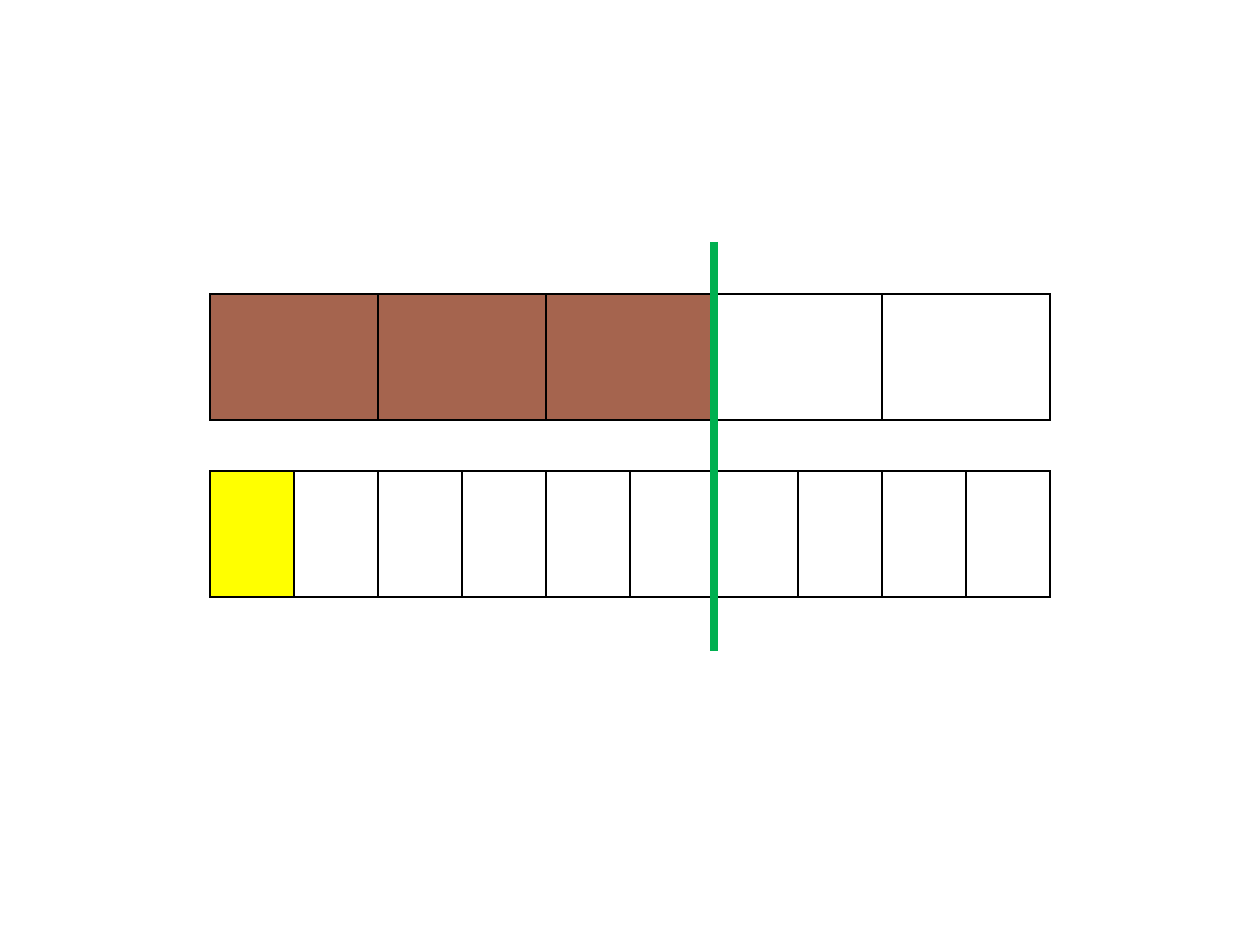
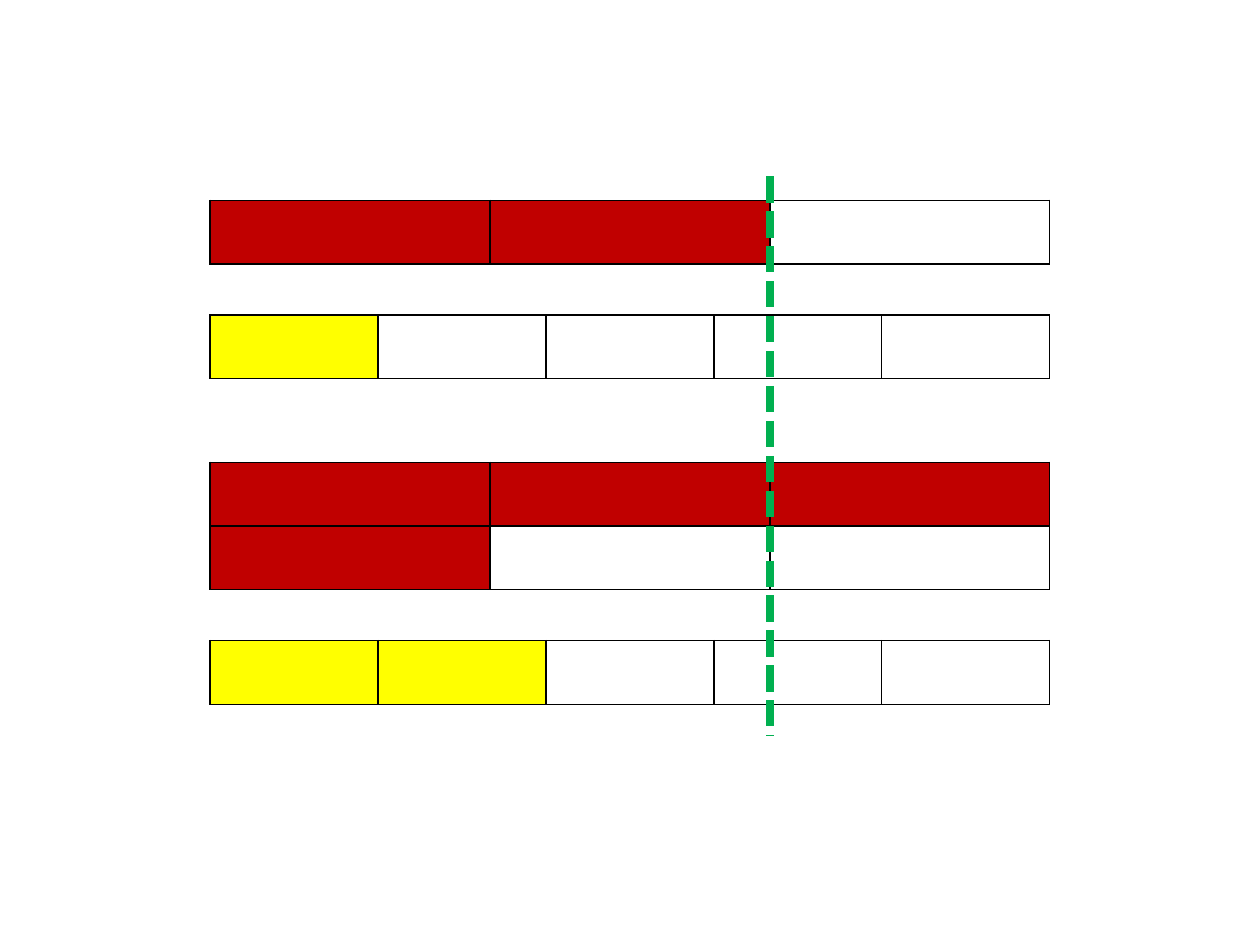
"""Builds two slides that compare fractions with divided bars and a marker line."""
import dataclasses
import math

import lxml.etree
import pptx
import pptx.dml.color
import pptx.enum.dml
import pptx.enum.shapes
import pptx.oxml
import pptx.oxml.ns
import pptx.util


@dataclasses.dataclass(frozen=True)
class Theme:
    brown: str = "A5644E"
    red: str = "C00000"
    yellow: str = "FFFF00"
    green: str = "00B050"
    outline: str = "000000"
    outline_width: float = 1
    marker_width: float = 5


@dataclasses.dataclass(frozen=True)
class Bar:
    pieces: int
    shaded: int
    color: str
    height: float
    framed: bool = True


class FractionDeck:
    grid_rows = 75
    bar_left = 1 / 6
    bar_width = 2 / 3

    def __init__(self, theme):
        self.theme = theme
        self.presentation = pptx.Presentation()
        self.presentation.slide_width = pptx.util.Inches(10)
        self.presentation.slide_height = pptx.util.Inches(7.5)
        self.slide = None

    def add_slide(self):
        self.slide = self.presentation.slides.add_slide(self.presentation.slide_layouts[6])

    def across(self, share):
        return round(self.presentation.slide_width * share)

    def down(self, rows):
        return round(self.presentation.slide_height * rows / self.grid_rows)

    def add_bars(self, top, bars):
        units = math.lcm(*(bar.pieces for bar in bars))
        cuts = sorted({cut for bar in bars for cut in range(0, units + 1, units // bar.pieces)})
        frame = self.slide.shapes.add_table(
            len(bars), len(cuts) - 1, self.across(self.bar_left), self.down(top),
            self.across(self.bar_width), self.down(sum(bar.height for bar in bars)))
        table = frame.table
        table.first_row = table.horz_banding = False
        for column, start, end in zip(table.columns, cuts, cuts[1:]):
            column.width = self.across(self.bar_width * (end - start) / units)
        for row, bar in enumerate(bars):
            table.rows[row].height = self.down(bar.height)
            self.divide_row(table, row, bar, cuts)

    def divide_row(self, table, row, bar, cuts):
        step = cuts[-1] // bar.pieces
        for piece in range(bar.pieces):
            first = cuts.index(piece * step)
            last = cuts.index((piece + 1) * step) - 1
            for column in range(first, last + 1):
                self.style_cell(table.cell(row, column), bar, piece < bar.shaded)
            if last > first:
                table.cell(row, first).merge(table.cell(row, last))

    def style_cell(self, cell, bar, shaded):
        if shaded:
            cell.fill.solid()
            cell.fill.fore_color.rgb = pptx.dml.color.RGBColor.from_string(bar.color)
        else:
            cell.fill.background()
        properties = cell._tc.get_or_add_tcPr()
        for position, side in enumerate("LRTB"):
            border = pptx.oxml.parse_xml(
                f'<a:ln{side} {pptx.oxml.ns.nsdecls("a")} '
                f'w="{pptx.util.Pt(self.theme.outline_width)}"/>')
            if bar.framed or side in "TB":
                fill = lxml.etree.SubElement(border, pptx.oxml.ns.qn("a:solidFill"))
                lxml.etree.SubElement(fill, pptx.oxml.ns.qn("a:srgbClr"), val=self.theme.outline)
            else:
                lxml.etree.SubElement(border, pptx.oxml.ns.qn("a:noFill"))
            properties.insert(position, border)

    def add_marker(self, fraction, top, bottom, dash=None):
        position = self.across(self.bar_left + self.bar_width * fraction)
        connector = self.slide.shapes.add_connector(
            pptx.enum.shapes.MSO_CONNECTOR.STRAIGHT,
            position, self.down(top), position, self.down(bottom))
        connector.line.color.rgb = pptx.dml.color.RGBColor.from_string(self.theme.green)
        connector.line.width = pptx.util.Pt(self.theme.marker_width)
        if dash is not None:
            connector.line.dash_style = dash
        lxml.etree.SubElement(connector._element.spPr, pptx.oxml.ns.qn("a:effectLst"))


def main():
    theme = Theme()
    deck = FractionDeck(theme)
    gap = Bar(1, 0, theme.outline, 4, framed=False)

    deck.add_slide()
    deck.add_bars(23.33, [Bar(5, 3, theme.brown, 10), gap, Bar(10, 1, theme.yellow, 10)])
    deck.add_marker(3 / 5, 19.2, 51.7)

    def thirds(shaded):
        return Bar(3, shaded, theme.red, 5.05)

    def fifths(shaded):
        return Bar(5, shaded, theme.yellow, 5.05)

    deck.add_slide()
    deck.add_bars(15.9, [thirds(2), gap, fifths(1)])
    deck.add_bars(36.7, [thirds(3), thirds(1), gap, fifths(2)])
    deck.add_marker(2 / 3, 14, 58.4, pptx.enum.dml.MSO_LINE.SQUARE_DOT)

    deck.presentation.save("out.pptx")


if __name__ == "__main__":
    main()
